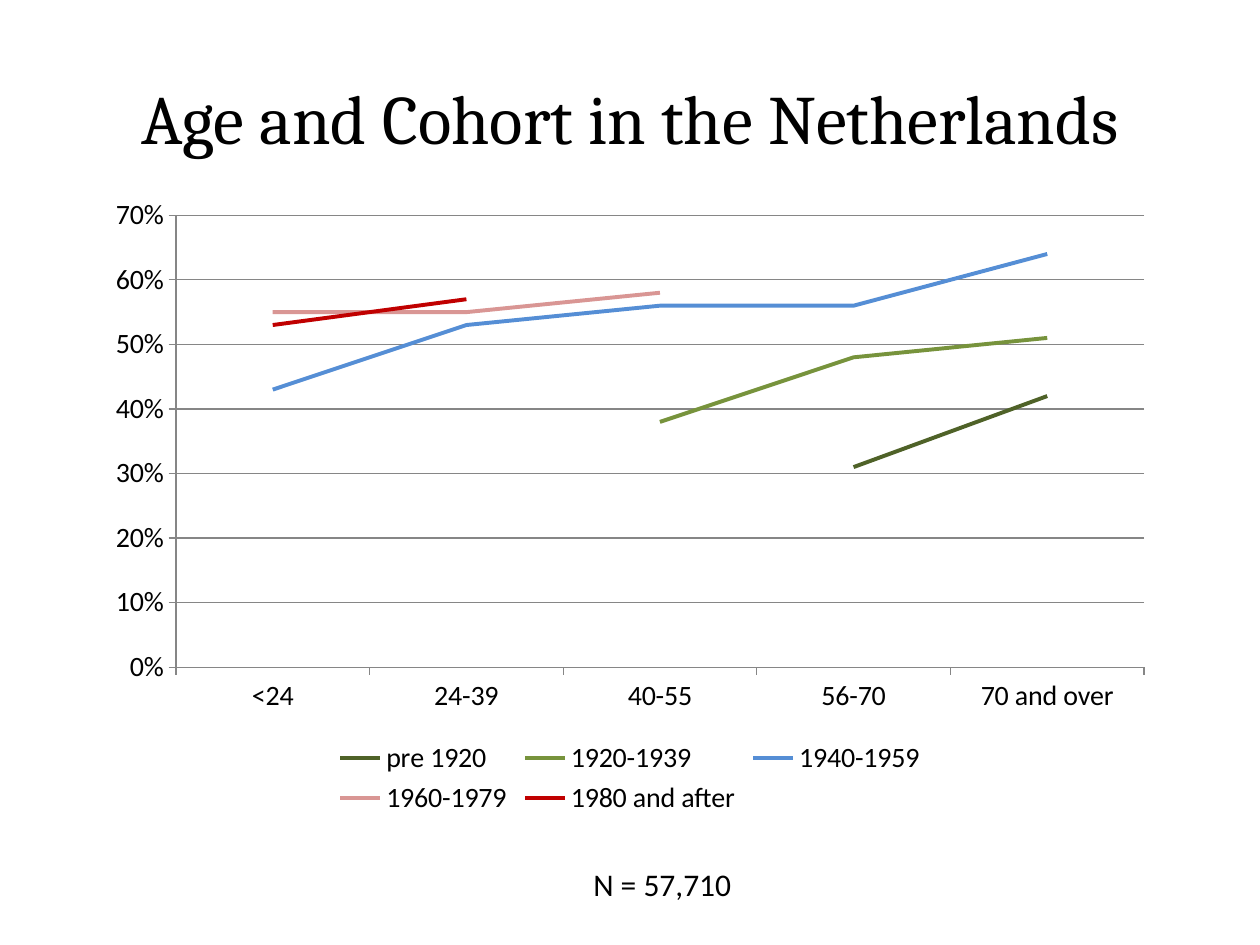
from pptx import Presentation
from pptx.chart.data import CategoryChartData
from pptx.dml.color import RGBColor
from pptx.enum.chart import XL_CHART_TYPE, XL_LEGEND_POSITION, XL_MARKER_STYLE, XL_TICK_MARK
from pptx.enum.text import MSO_ANCHOR, PP_ALIGN
from pptx.util import Pt

LINE_CHART = XL_CHART_TYPE.LINE
LEGEND_BOTTOM = XL_LEGEND_POSITION.BOTTOM
NO_MARKER = XL_MARKER_STYLE.NONE
TICK_OUTSIDE = XL_TICK_MARK.OUTSIDE
MIDDLE = MSO_ANCHOR.MIDDLE
TOP = MSO_ANCHOR.TOP
CENTER = PP_ALIGN.CENTER
LEFT = PP_ALIGN.LEFT

AGE_GROUPS = ["<24", "24-39", "40-55", "56-70", "70 and over"]
COHORTS = [
    ("pre 1920", "4F6228", (None, None, None, 0.31, 0.42)),
    ("1920-1939", "77933C", (None, None, 0.38, 0.48, 0.51)),
    ("1940-1959", "558ED5", (0.43, 0.53, 0.56, 0.56, 0.64)),
    ("1960-1979", "D99694", (0.55, 0.55, 0.58, None, None)),
    ("1980 and after", "C00000", (0.53, 0.57, None, None, None)),
]


def rgb(hex_color):
    return RGBColor.from_string(hex_color)


class SlideBuilder:
    """Holds the style and the slide being filled; boxes are in points."""

    text_color = "000000"
    axis_color = "868686"
    heading_font = "Cambria"
    body_font = "Calibri"

    def __init__(self, slide):
        self.slide = slide

    def style_font(self, font, name, size):
        font.name = name
        font.size = Pt(size)
        font.color.rgb = rgb(self.text_color)

    def text(self, box, wording, font_name, size, align=LEFT, anchor=TOP, wrap=True):
        frame = self.slide.shapes.add_textbox(*map(Pt, box)).text_frame
        frame.word_wrap = wrap
        frame.vertical_anchor = anchor
        paragraph = frame.paragraphs[0]
        paragraph.text = wording
        paragraph.alignment = align
        self.style_font(paragraph.font, font_name, size)

    def line_chart(self, box, categories, series_rows, size, line_width):
        data = CategoryChartData(number_format="0%")
        data.categories = categories
        for name, _, values in series_rows:
            data.add_series(name, values)
        chart = self.slide.shapes.add_chart(LINE_CHART, *map(Pt, box), data).chart
        self.style_font(chart.font, self.body_font, size)
        chart.has_title = False
        chart.has_legend = True
        chart.legend.position = LEGEND_BOTTOM
        chart.legend.include_in_layout = False
        chart.plots[0].vary_by_categories = False

        for series, (_, color, _) in zip(chart.plots[0].series, series_rows):
            series.smooth = False
            series.marker.style = NO_MARKER
            series.format.line.color.rgb = rgb(color)
            series.format.line.width = Pt(line_width)

        percent_axis = chart.value_axis
        percent_axis.minimum_scale = 0
        percent_axis.maximum_scale = 0.7
        percent_axis.major_unit = 0.1
        percent_axis.tick_labels.number_format = "0%"
        percent_axis.tick_labels.number_format_is_linked = False
        percent_axis.has_major_gridlines = True
        for ruled in (percent_axis, chart.category_axis, percent_axis.major_gridlines):
            ruled.format.line.color.rgb = rgb(self.axis_color)
            ruled.format.line.width = Pt(0.75)
        for axis in (percent_axis, chart.category_axis):
            axis.major_tick_mark = TICK_OUTSIDE


def main():
    presentation = Presentation()
    presentation.slide_width = Pt(720)
    presentation.slide_height = Pt(540)
    builder = SlideBuilder(presentation.slides.add_slide(presentation.slide_layouts[6]))

    builder.text((36, 21.6, 648, 90), "Age and Cohort in the Netherlands",
                 builder.heading_font, 39.6, align=CENTER, anchor=MIDDLE)
    builder.text((332, 490.5, 94.5, 29), "N = 57,710", builder.body_font, 18, wrap=False)
    builder.line_chart((54, 106, 612, 363), AGE_GROUPS, COHORTS, size=16, line_width=2.25)

    presentation.save("out.pptx")


if __name__ == "__main__":
    main()
